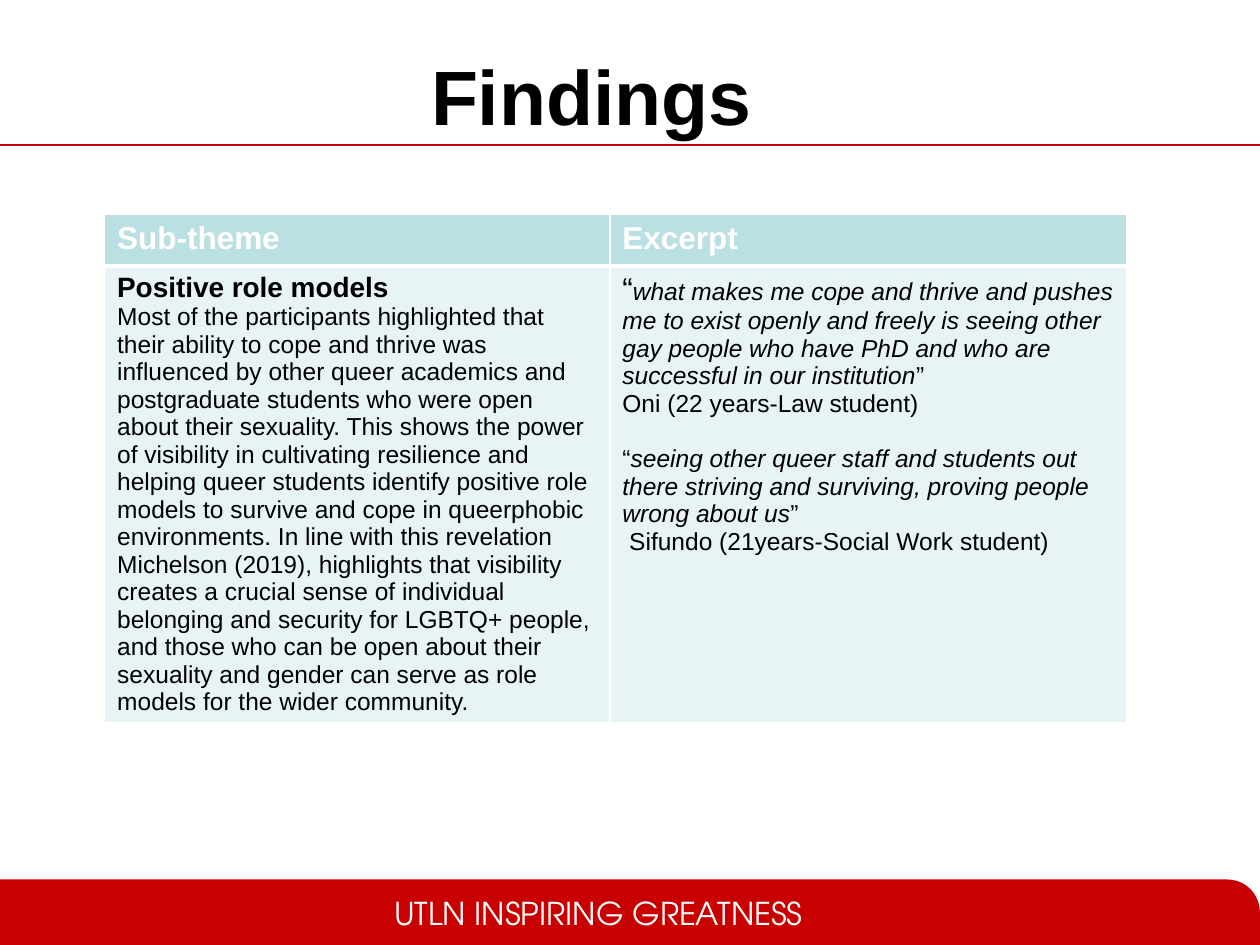
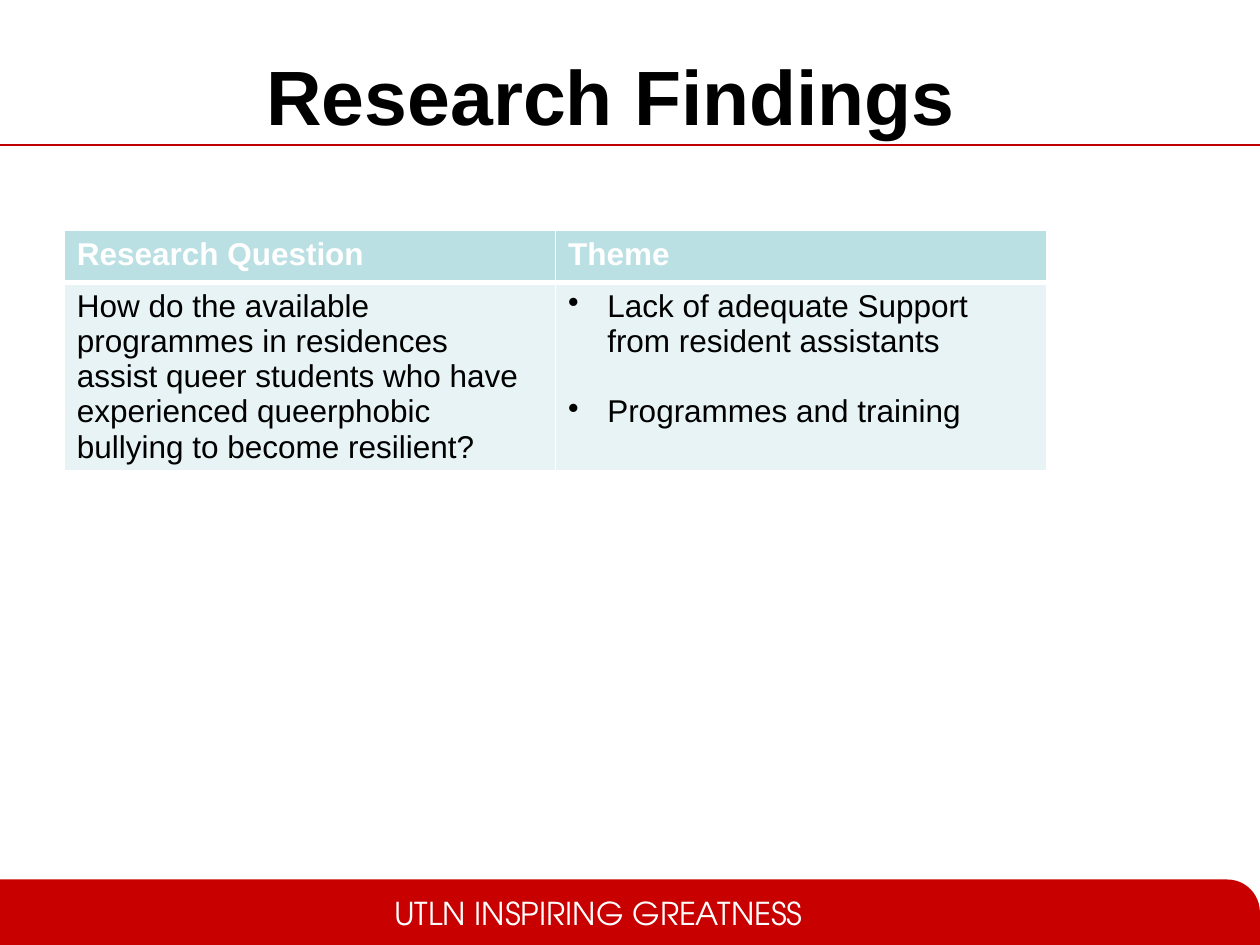
from dataclasses import dataclass

import lxml.etree
import pptx
import pptx.dml.color
import pptx.enum.shapes
import pptx.enum.text
import pptx.oxml.ns
import pptx.util

Inches = pptx.util.Inches
Pt = pptx.util.Pt
qn = pptx.oxml.ns.qn


@dataclass(frozen=True)
class Theme:
    body_font: str = "Arial"
    footer_font: str = "TeX Gyre Adventor"
    ink: str = "000000"
    white: str = "FFFFFF"
    rule: str = "C00000"
    band: str = "C80000"
    header_fill: str = "BBE0E3"
    body_fill: str = "E7F3F4"
    title_size: int = 44
    large: int = 18
    subhead: int = 16
    small: int = 14


@dataclass(frozen=True)
class Run:
    text: str
    size: int
    bold: bool = False
    italic: bool = False


@dataclass(frozen=True)
class Para:
    runs: tuple
    before: int = 0
    bullet: bool = False


def rgb(value):
    return pptx.dml.color.RGBColor.from_string(value)


class Deck:
    def __init__(self, theme):
        self.theme = theme
        self.prs = pptx.Presentation()
        self.prs.slide_width = Inches(10)
        self.prs.slide_height = Inches(7.5)
        self.slide = None

    def add_slide(self, title, left):
        self.slide = self.prs.slides.add_slide(self.prs.slide_layouts[5])
        self.rule()
        self.footer("UTLN INSPIRING GREATNESS")
        self.title(title, left)

    def append_run(self, paragraph, run, color, font=None):
        piece = paragraph.add_run()
        piece.text = run.text
        piece.font.name = font or self.theme.body_font
        piece.font.size = Pt(run.size)
        piece.font.bold = run.bold
        piece.font.italic = run.italic
        piece.font.color.rgb = rgb(color)

    def rule(self):
        line = self.slide.shapes.add_connector(
            pptx.enum.shapes.MSO_CONNECTOR.STRAIGHT,
            Inches(0), Inches(1.15), Inches(10), Inches(1.15))
        line.line.color.rgb = rgb(self.theme.rule)
        line.line.width = Pt(0.75)
        lxml.etree.SubElement(line.element.spPr, qn("a:effectLst"))

    def footer(self, motto):
        band = self.slide.shapes.add_shape(
            pptx.enum.shapes.MSO_SHAPE.ROUND_1_RECTANGLE,
            Inches(0), Inches(6.98), Inches(10), Inches(0.52))
        band.adjustments[0] = 0.5
        band.shadow.inherit = False
        band.fill.solid()
        band.fill.fore_color.rgb = rgb(self.theme.band)
        band.line.fill.background()
        label = self.slide.shapes.add_textbox(
            Inches(3.03), Inches(7.05), Inches(3.54), Inches(0.4))
        label.text_frame.word_wrap = True
        self.append_run(label.text_frame.paragraphs[0], Run(motto, self.theme.large),
                        self.theme.white, self.theme.footer_font)

    def title(self, text, left):
        heading = self.slide.shapes.title
        heading.left, heading.top = Inches(left), Inches(0.13)
        heading.width, heading.height = Inches(9), Inches(1.25)
        frame = heading.text_frame
        frame.vertical_anchor = pptx.enum.text.MSO_ANCHOR.MIDDLE
        frame.paragraphs[0].alignment = pptx.enum.text.PP_ALIGN.CENTER
        self.append_run(frame.paragraphs[0], Run(text, self.theme.title_size, bold=True),
                        self.theme.ink)
        heading.element.getparent().append(heading.element)

    def borders(self, cell, top, bottom):
        properties = cell._tc.get_or_add_tcPr()
        for side, width in (("L", 1), ("R", 1), ("T", top), ("B", bottom)):
            edge = lxml.etree.SubElement(properties, qn(f"a:ln{side}"), w=str(Pt(width)))
            fill = lxml.etree.SubElement(edge, qn("a:solidFill"))
            lxml.etree.SubElement(fill, qn("a:srgbClr"), val=self.theme.white)

    def bullet(self, paragraph):
        properties = paragraph._p.get_or_add_pPr()
        properties.set("marL", str(Inches(0.31)))
        properties.set("indent", str(-Inches(0.31)))
        lxml.etree.SubElement(properties, qn("a:buChar"), char="•")

    def fill_cell(self, cell, paras, fill, color):
        cell.fill.solid()
        cell.fill.fore_color.rgb = rgb(fill)
        frame = cell.text_frame
        for index, para in enumerate(paras):
            paragraph = frame.add_paragraph() if index else frame.paragraphs[0]
            if para.before:
                paragraph.space_before = Pt(para.before)
            if para.bullet:
                self.bullet(paragraph)
            for run in para.runs:
                self.append_run(paragraph, run, color)

    def table(self, left, top, height, widths, headings, contents):
        theme = self.theme
        frame = self.slide.shapes.add_table(
            2, len(widths), Inches(left), Inches(top), Inches(sum(widths)), Inches(height))
        grid = frame.table
        for row in grid.rows:
            row.height = Inches(0.41)
        frame.height = Inches(height)
        for column, (width, heading, paras) in enumerate(zip(widths, headings, contents)):
            grid.columns[column].width = Inches(width)
            head, body = grid.cell(0, column), grid.cell(1, column)
            self.borders(head, 1, 3)
            self.borders(body, 3, 1)
            self.fill_cell(head, [Para((Run(heading, theme.large, bold=True),))],
                           theme.header_fill, theme.white)
            self.fill_cell(body, paras, theme.body_fill, theme.ink)


def quote(text, opening_size, size, before=0):
    return Para((Run("“", opening_size), Run(text, size, italic=True), Run("”", size)), before)


def plain(text, size, before=0, bullet=False):
    return Para((Run(text, size),), before, bullet)


def main():
    theme = Theme()
    deck = Deck(theme)
    large, small = theme.large, theme.small

    deck.add_slide("Findings ", 0.28)
    role_models = [
        Para((Run("Positive role models", theme.subhead, bold=True),)),
        plain("Most of the participants highlighted that their ability to cope and thrive was "
              "influenced by other queer academics and postgraduate students who were open about "
              "their sexuality. This shows the power of visibility in cultivating resilience and "
              "helping queer students identify positive role models to survive and cope in "
              "queerphobic environments. In line with this revelation Michelson (2019), "
              "highlights that visibility creates a crucial sense of individual belonging and "
              "security for LGBTQ+ people, and those who can be open about their sexuality and "
              "gender can serve as role models for the wider community.", small),
    ]
    excerpts = [
        quote("what makes me cope and thrive and pushes me to exist openly and freely is seeing "
              "other gay people who have PhD and who are successful in our institution",
              large, small),
        plain("Oni (22 years-Law student)", small),
        quote("seeing other queer staff and students out there striving and surviving, proving "
              "people wrong about us", small, small, before=16),
        plain(" Sifundo (21years-Social Work student)", small),
    ]
    deck.table(0.83, 1.7, 4.27, (4.01, 4.1), ("Sub-theme", "Excerpt"), (role_models, excerpts))

    deck.add_slide("Research Findings", 0.35)
    question = [
        plain("How do the available programmes in residences", large),
        plain("assist queer students who have experienced queerphobic bullying to become "
              "resilient?", large),
    ]
    themes = [
        plain("Lack of adequate Support from resident assistants", large, bullet=True),
        plain("Programmes and training", large, before=20, bullet=True),
    ]
    deck.table(0.51, 1.83, 2.01, (3.9, 3.9), ("Research Question", "Theme"), (question, themes))

    deck.prs.save("out.pptx")


if __name__ == "__main__":
    main()
